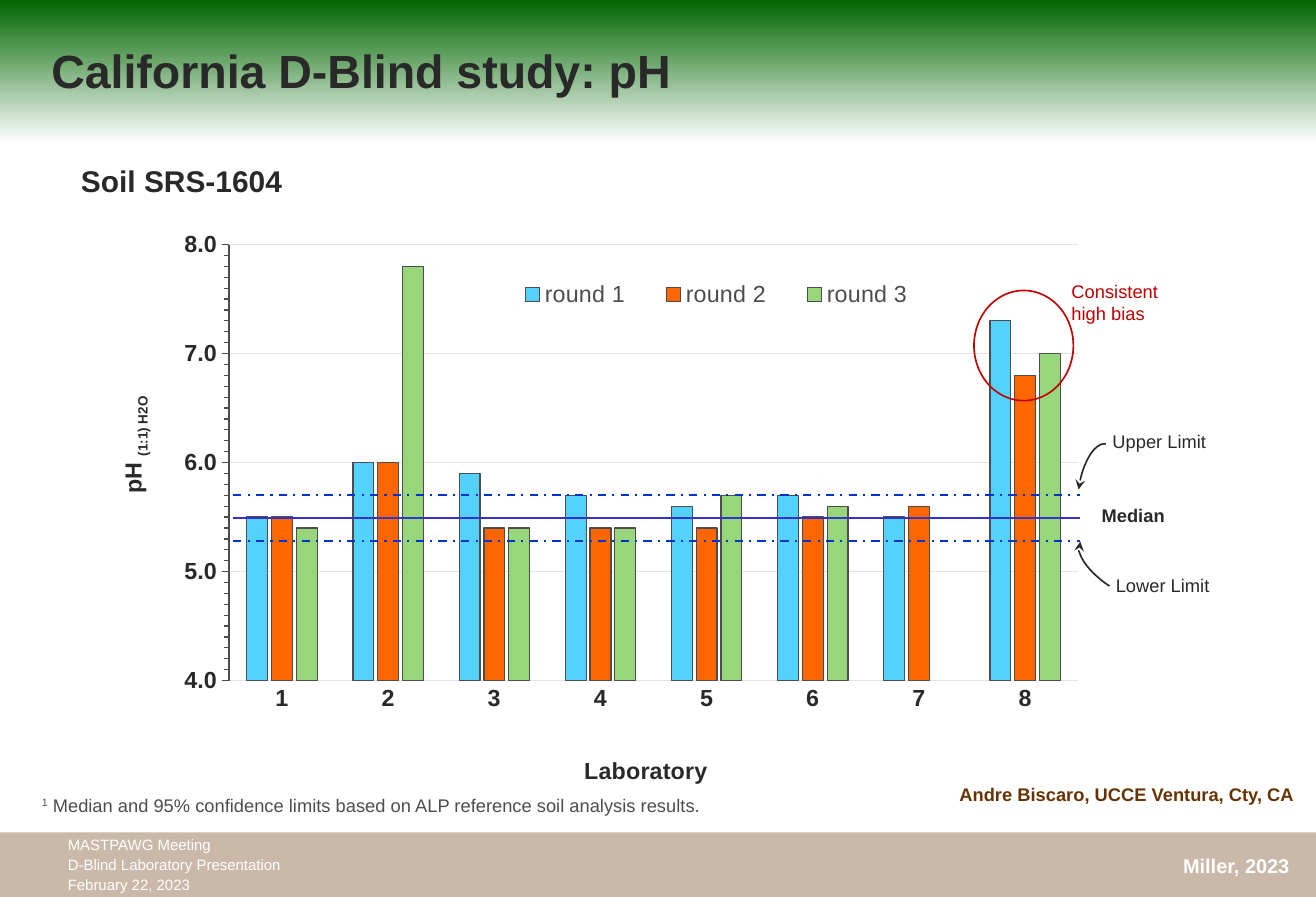
from dataclasses import dataclass

from lxml import etree
from pptx import Presentation
from pptx import util as u
from pptx.chart.data import CategoryChartData
from pptx.dml.color import RGBColor
from pptx.enum import chart as charts, dml, shapes, text
from pptx.oxml import parse_xml
from pptx.oxml.ns import nsdecls, qn

FONT = "Arial"
DARK, GRAY, GRID = "292929", "4D4D4D", "E4E4E4"
RED, BROWN, WHITE = "C00000", "663300", "FFFFFF"
ROUNDS = [
    ("round 1", "53D2FF", (5.5, 6, 5.9, 5.7, 5.6, 5.7, 5.5, 7.3)),
    ("round 2", "FF6600", (5.5, 6, 5.4, 5.4, 5.4, 5.5, 5.6, 6.8)),
    ("round 3", "98D67C", (5.4, 7.8, 5.4, 5.4, 5.7, 5.6, 0, 7)),
]


@dataclass
class Box:
    left: float
    top: float
    width: float
    height: float

    def inside(self, left, top, width, height):
        return Box(self.left + left, self.top + top, width, height)

    def lengths(self):
        return [u.Cm(value) for value in (self.left, self.top, self.width, self.height)]


def color(hex_string):
    return RGBColor.from_string(hex_string)


def set_line(line, hex_string, width):
    line.color.rgb = color(hex_string)
    line.width = u.Pt(width)


def set_font(font, size, hex_string, bold=False):
    font.name = FONT
    font.size = u.Pt(size)
    font.bold = bold
    font.color.rgb = color(hex_string)


def add_text(parent, box, paragraphs, size=11, hex_string=DARK, bold=False, wrap=False,
             spacing=None, rotation=0, anchor=text.MSO_ANCHOR.TOP):
    shape = parent.add_textbox(*box.lengths())
    shape.rotation = rotation
    frame = shape.text_frame
    frame.word_wrap = wrap
    frame.vertical_anchor = anchor
    for index, runs in enumerate(paragraphs):
        paragraph = frame.paragraphs[0] if index == 0 else frame.add_paragraph()
        if spacing:
            paragraph.line_spacing = u.Pt(spacing)
        for words, baseline in [(runs, 0)] if isinstance(runs, str) else runs:
            run = paragraph.add_run()
            run.text = words
            set_font(run.font, size, hex_string, bold)
            if baseline:
                run.font._element.set("baseline", str(baseline * 1000))
    return shape


def add_outline(parent, kind, box, hex_string, rotation=0, arrow=None):
    shape = parent.add_shape(kind, *box.lengths())
    shape.shadow.inherit = False
    shape.fill.background()
    set_line(shape.line, hex_string, 1)
    shape.rotation = rotation
    if arrow:
        etree.SubElement(shape.line._get_or_add_ln(), qn(f"a:{arrow}"), type="stealth")


def add_level(parent, box, y, hex_string, width, dash=None):
    top = box.top + y
    line = parent.add_connector(shapes.MSO_CONNECTOR.STRAIGHT, u.Cm(box.left), u.Cm(top),
                                u.Cm(box.left + box.width), u.Cm(top))
    etree.SubElement(line._element.spPr, qn("a:effectLst"))
    set_line(line.line, hex_string, width)
    if dash:
        line.line.dash_style = dash


def manual_layout(x, y, width=None, height=None, inner=False):
    parts = ['<c:layoutTarget val="inner"/>'] if inner else []
    parts += ['<c:xMode val="edge"/>', '<c:yMode val="edge"/>']
    for tag, value in (("x", x), ("y", y), ("w", width), ("h", height)):
        if value is not None:
            parts.append(f'<c:{tag} val="{value}"/>')
    return parse_xml(f'<c:layout {nsdecls("c")}><c:manualLayout>{"".join(parts)}'
                     '</c:manualLayout></c:layout>')


def place_layout(element, predecessor, layout):
    for old in element.findall(qn("c:layout")):
        element.remove(old)
    if predecessor is None:
        element.insert(0, layout)
    else:
        element.find(qn(predecessor)).addnext(layout)


def format_axes(chart):
    labs = chart.category_axis
    labs.major_tick_mark = charts.XL_TICK_MARK.NONE
    set_font(labs.tick_labels.font, 14, DARK, True)
    set_line(labs.format.line, GRID, 0.75)
    title = labs.axis_title
    title.text_frame.text = "Laboratory"
    set_font(title.text_frame.paragraphs[0].runs[0].font, 14, DARK, True)
    place_layout(title._element, "c:tx", manual_layout(0.44, 0.81))

    acidity = chart.value_axis
    acidity.minimum_scale, acidity.maximum_scale = 4, 8
    acidity.major_unit, acidity.minor_unit = 1, 0.1
    acidity.major_tick_mark = acidity.minor_tick_mark = charts.XL_TICK_MARK.OUTSIDE
    acidity.tick_labels.number_format = "0.0"
    acidity.tick_labels.number_format_is_linked = False
    set_font(acidity.tick_labels.font, 14, DARK, True)
    set_line(acidity.format.line, GRAY, 0.75)
    set_line(acidity.major_gridlines.format.line, GRID, 0.75)


def add_ph_chart(parent, box):
    data = CategoryChartData()
    data.categories = [str(lab) for lab in range(1, 9)]
    for name, _, values in ROUNDS:
        data.add_series(name, values)
    chart = parent.add_chart(charts.XL_CHART_TYPE.COLUMN_CLUSTERED, *box.lengths(), data).chart
    chart.has_title = False
    set_font(chart.font, 14, GRAY)
    chart.has_legend = True
    chart.legend.position = charts.XL_LEGEND_POSITION.BOTTOM
    chart.legend.include_in_layout = False
    set_font(chart.legend.font, 14, GRAY)
    place_layout(chart.legend._element, "c:legendPos", manual_layout(0.35, 0.08, 0.46, 0.07))
    plot = chart.plots[0]
    plot.gap_width, plot.overlap = 172, -19
    plot.vary_by_categories = False
    for series, (_, fill, _) in zip(plot.series, ROUNDS):
        series.format.fill.solid()
        series.format.fill.fore_color.rgb = color(fill)
        set_line(series.format.line, GRAY, 0.75)
    format_axes(chart)
    plot_area = chart._chartSpace.chart.plotArea
    place_layout(plot_area, None, manual_layout(0.081, 0.039, 0.869, 0.663, inner=True))


def add_annotations(parent, box):
    add_text(parent, box.inside(-1.81, 4.21, 2.9, 0.86), [[("pH ", 0), ("(1:1) H2O", -25)]],
             size=14, bold=True, rotation=270)
    levels = box.inside(1.77, 6.35, 17.99, 0)
    add_level(parent, levels, 0, "3333CC", 1.5)
    for offset in (0.48, -0.48):
        add_level(parent, levels, offset, "0033CC", 1.25, dml.MSO_LINE.DASH_DOT)
    add_text(parent, box.inside(19.96, 5.94, 1.85, 0.74), ["Median"], bold=True)
    add_text(parent, box.inside(20.19, 4.37, 2.51, 0.74), ["Upper Limit"])
    add_text(parent, box.inside(20.26, 7.42, 2.51, 0.74), ["Lower Limit"])
    arc = shapes.MSO_SHAPE.ARC
    add_outline(parent, arc, box.inside(19.12, 5.36, 2.08, 0.89), DARK, 277.7, "headEnd")
    add_outline(parent, arc, box.inside(19.58, 6.98, 2.08, 0.89), DARK, 213.6, "tailEnd")
    add_outline(parent, shapes.MSO_SHAPE.OVAL, box.inside(17.5, 1.52, 2.11, 2.34), RED)
    add_text(parent, box.inside(19.32, 1.17, 2.46, 1.19), ["Consistent", "high bias"],
             hex_string=RED)


def add_header(parent, box):
    add_text(parent, box.inside(0.84, 0.13, 20.73, 2.72), ["California D-Blind study: pH"],
             size=28, bold=True, wrap=True, anchor=text.MSO_ANCHOR.MIDDLE)
    add_text(parent, box.inside(1.47, 3.33, 4.83, 1.02), ["Soil SRS-1604"], size=18, bold=True)


def add_footer(parent, box):
    group = parent.add_group_shape().shapes
    band = group.add_shape(shapes.MSO_SHAPE.RECTANGLE, *box.lengths())
    band.shadow.inherit = False
    band.line.fill.background()
    band.fill.solid()
    band.fill.fore_color.rgb = color(BROWN)
    tint = band._element.spPr.find(qn("a:solidFill"))[0]
    etree.SubElement(tint, qn("a:alpha"), val="34000")
    add_text(group, box.inside(24.87, 0.33, 2.79, 0.76), ["Miller, 2023"], size=12,
             hex_string=WHITE, bold=True)
    add_text(group, box.inside(1.19, -0.1, 5.26, 1.55),
             ["MASTPAWG Meeting", "D-Blind Laboratory Presentation", "February 22, 2023"],
             size=9, hex_string=WHITE, spacing=12)


def add_credits(parent, box):
    add_text(parent, box.inside(20.12, 0, 7.82, 0.99), ["Andre Biscaro, UCCE Ventura, Cty, CA"],
             hex_string=BROWN, bold=True, wrap=True, spacing=24)
    note = " Median and 95% confidence limits based on ALP reference soil analysis results."
    add_text(parent, box.inside(0.64, 0.61, 14.66, 0.74), [[("1", 30), (note, 0)]],
             hex_string=GRAY, wrap=True)


def set_background(slide):
    fill = slide.background.fill
    fill.gradient()
    fill.gradient_angle = 270
    for stop, position, hex_string in zip(fill.gradient_stops, (0, 0.16), ("006600", WHITE)):
        stop.position = position
        stop.color.rgb = color(hex_string)


def main():
    presentation = Presentation()
    presentation.slide_width, presentation.slide_height = u.Cm(27.94), u.Cm(19.05)
    slide = presentation.slides.add_slide(presentation.slide_layouts[6])
    set_background(slide)
    panel = Box(3.18, 4.65, 20.75, 13.97)
    add_ph_chart(slide.shapes, panel)
    add_header(slide.shapes, Box(0, 0, 27.94, 4.35))
    add_annotations(slide.shapes, panel)
    add_footer(slide.shapes, Box(0, 17.68, 27.94, 1.37))
    add_credits(slide.shapes, Box(0, 16.13, 27.94, 1.35))
    presentation.save("out.pptx")


if __name__ == "__main__":
    main()
